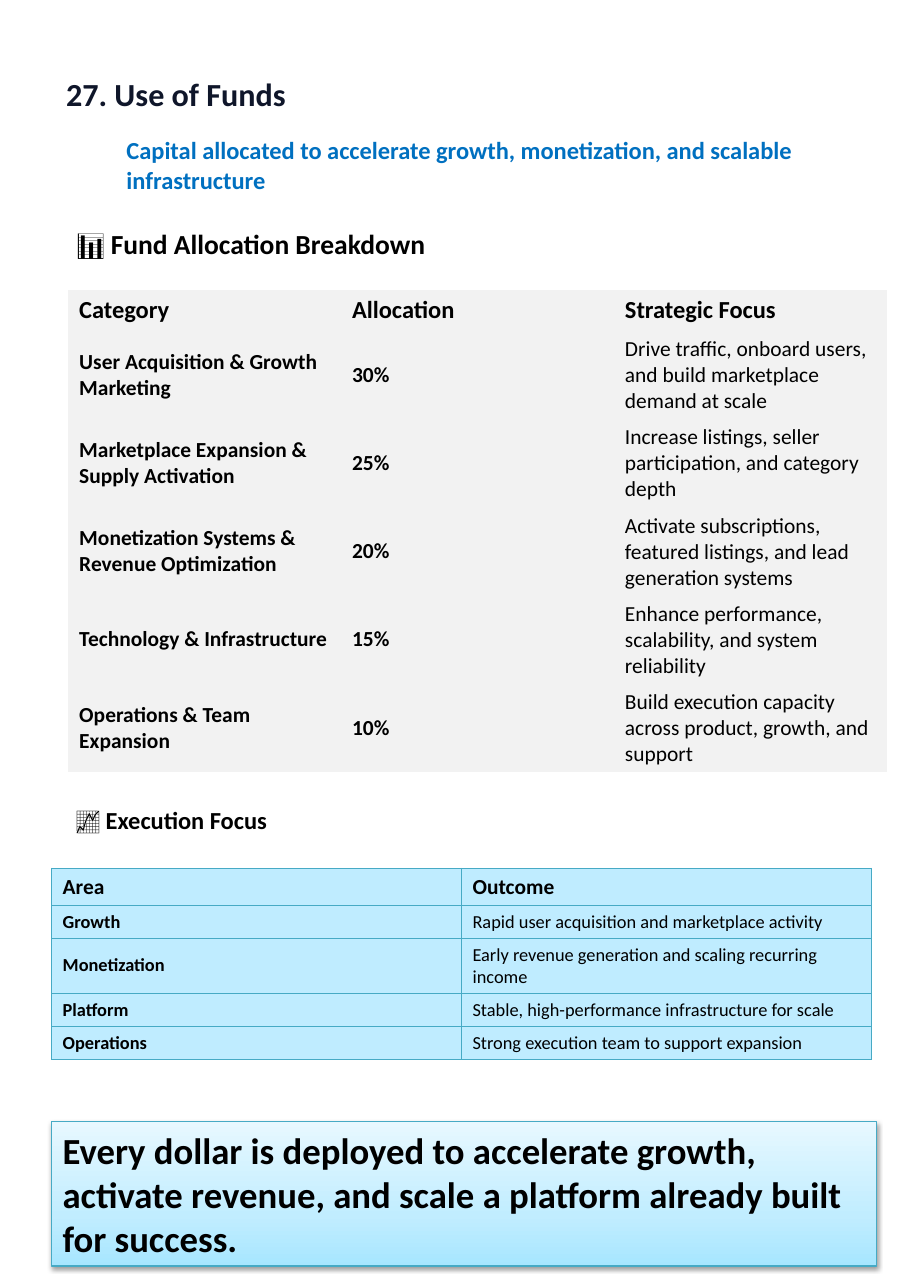
from lxml import etree
from pptx import Presentation
from pptx.dml.color import RGBColor
from pptx.enum.shapes import MSO_SHAPE
from pptx.enum.text import MSO_ANCHOR, PP_ALIGN
from pptx.oxml import parse_xml
from pptx.oxml.ns import qn
from pptx.util import Pt

MIDDLE = MSO_ANCHOR.MIDDLE
LEFT = PP_ALIGN.LEFT
RECTANGLE = MSO_SHAPE.RECTANGLE

FONT = "Calibri"
BLACK = RGBColor(0x00, 0x00, 0x00)
NAVY = RGBColor(0x0F, 0x16, 0x2A)
BLUE = RGBColor(0x00, 0x70, 0xC0)
GRAY = RGBColor(0xF2, 0xF2, 0xF2)
SKY = RGBColor(0xBF, 0xEC, 0xFF)
TEAL = RGBColor(0x46, 0xAA, 0xC5)
CALLOUT_STOPS = [
    (0, RGBColor(0xA7, 0xE6, 0xFF)),
    (35, RGBColor(0xC1, 0xED, 0xFF)),
    (100, RGBColor(0xE7, 0xF8, 0xFF)),
]
NS = 'xmlns:a="http://schemas.openxmlformats.org/drawingml/2006/main"'

ALLOCATION = [
    ("Category", "Allocation", "Strategic Focus"),
    ("User Acquisition & Growth Marketing", "30%",
     "Drive traffic, onboard users, and build marketplace demand at scale"),
    ("Marketplace Expansion & Supply Activation", "25%",
     "Increase listings, seller participation, and category depth"),
    ("Monetization Systems & Revenue Optimization", "20%",
     "Activate subscriptions, featured listings, and lead generation systems"),
    ("Technology & Infrastructure", "15%",
     "Enhance performance, scalability, and system reliability"),
    ("Operations & Team Expansion", "10%",
     "Build execution capacity across product, growth, and support"),
]
EXECUTION = [
    ("Area", "Outcome"),
    ("Growth", "Rapid user acquisition and marketplace activity"),
    ("Monetization", "Early revenue generation and scaling recurring income"),
    ("Platform", "Stable, high-performance infrastructure for scale"),
    ("Operations", "Strong execution team to support expansion"),
]


def style(p, size, color=BLACK, bold=None):
    p.font.name = FONT
    p.font.size = Pt(size)
    p.font.color.rgb = color
    p.font.bold = bold


def add_text(s, box, text, size, color=BLACK, icon=None):
    tf = s.shapes.add_textbox(*map(Pt, box)).text_frame
    tf.word_wrap = True
    p = tf.paragraphs[0]
    if icon:
        p.add_run().text = icon + " "
    r = p.add_run()
    r.text = text
    style(p, size, color, None if icon else True)
    if icon:
        r.font.bold = True
    return tf


def add_title(s, box):
    tf = add_text(s, box, "27. Use of Funds", 21, NAVY)
    tf.margin_left = tf.margin_right = tf.margin_bottom = 0
    tf.margin_top = Pt(1.7)


def set_borders(cell, color):
    tcPr = cell._tc.get_or_add_tcPr()
    for side in "LRTB":
        ln = etree.SubElement(tcPr, qn(f"a:ln{side}"), w=str(Pt(0.75)))
        if color is None:
            etree.SubElement(ln, qn("a:noFill"))
        else:
            fill = etree.SubElement(ln, qn("a:solidFill"))
            etree.SubElement(fill, qn("a:srgbClr"), val=str(color))


def add_grid(s, box, rows, heights, head_size, body_size, fill, border=None):
    table = s.shapes.add_table(len(rows), len(rows[0]), *map(Pt, box)).table
    table.first_row = False
    table.horz_banding = False
    for col in table.columns:
        col.width = Pt(box[2] / len(rows[0]))
    for i, (values, height) in enumerate(zip(rows, heights)):
        table.rows[i].height = Pt(height)
        for j, value in enumerate(values):
            cell = table.cell(i, j)
            cell.text = value
            cell.vertical_anchor = MIDDLE
            set_borders(cell, border)
            cell.fill.solid()
            cell.fill.fore_color.rgb = fill
            size = body_size if i else head_size
            style(cell.text_frame.paragraphs[0], size,
                  bold=i == 0 or j < len(values) - 1)


def add_callout(s, box, text):
    sp = s.shapes.add_shape(RECTANGLE, *map(Pt, box))
    sp.line.color.rgb = TEAL
    sp.line.width = Pt(0.75)
    stops = "".join(
        f'<a:gs pos="{pos * 1000}"><a:srgbClr val="{color}"/></a:gs>'
        for pos, color in CALLOUT_STOPS)
    ln = sp._element.spPr.find(qn("a:ln"))
    ln.addprevious(parse_xml(
        f'<a:gradFill {NS} rotWithShape="1"><a:gsLst>{stops}</a:gsLst>'
        '<a:lin ang="16200000" scaled="1"/></a:gradFill>'))
    ln.addnext(parse_xml(
        f'<a:effectLst {NS}><a:outerShdw blurRad="{Pt(3.1)}" '
        f'dist="{Pt(1.6)}" dir="5400000" rotWithShape="0">'
        f'<a:srgbClr val="{BLACK}"><a:alpha val="38000"/></a:srgbClr>'
        '</a:outerShdw></a:effectLst>'))
    tf = sp.text_frame
    tf.word_wrap = True
    p = tf.paragraphs[0]
    p.text = text
    p.alignment = LEFT
    style(p, 24, bold=True)


def add_funds_slide(prs):
    s = prs.slides.add_slide(prs.slide_layouts[6])
    add_title(s, (43.2, 46.8, 170, 27.4))
    add_text(s, (75.6, 85, 504, 46),
             "Capital allocated to accelerate growth, monetization, "
             "and scalable infrastructure", 16, BLUE)
    add_text(s, (43.2, 144.7, 297.4, 29), "Fund Allocation Breakdown", 18,
             icon="📊")
    add_grid(s, (44.6, 189.4, 535, 314.7), ALLOCATION,
             [26.7] + [57.6] * 5, 16, 14, GRAY)
    add_text(s, (42.5, 522.7, 297.4, 26.6), "Execution Focus", 16, icon="📈")
    add_grid(s, (33.8, 567.4, 535.7, 124.8), EXECUTION,
             [24, 21.6, 36, 21.6, 21.6], 14, 12, SKY, TEAL)
    add_callout(s, (33.8, 733, 539.3, 94.3),
                "Every dollar is deployed to accelerate growth, activate "
                "revenue, and scale a platform already built for success.")


def main():
    prs = Presentation()
    prs.slide_width = Pt(594.72)
    prs.slide_height = Pt(841.68)
    add_funds_slide(prs)
    prs.save("out.pptx")


if __name__ == "__main__":
    main()
